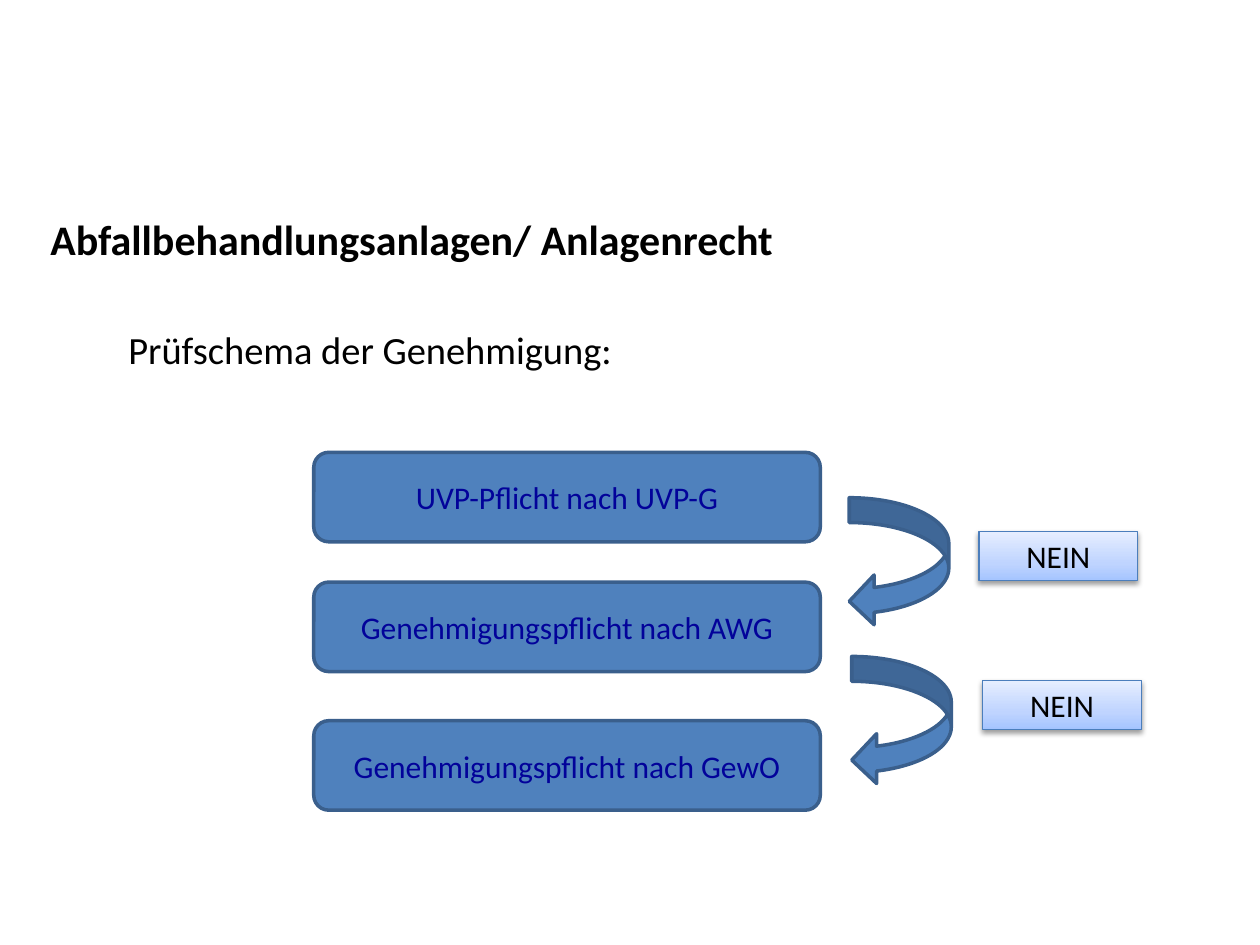
from lxml.etree import SubElement
from pptx import Presentation
from pptx.dml.color import RGBColor
from pptx.enum.shapes import MSO_SHAPE
from pptx.enum.text import MSO_ANCHOR, PP_ALIGN
from pptx.oxml import parse_xml
from pptx.oxml.ns import nsdecls, qn
from pptx.util import Inches, Pt

FONT = "Calibri"
COLORS = {
    "text": "000000", "step": "4F81BD", "step_line": "3A5F8C",
    "step_text": "02029A", "label_line": "4B7EBC", "shadow": "000000",
}
LABEL_STOPS = [(0, "A4C4FF"), (35, "BFD4FF"), (100, "E6EEFF")]
STEPS = ["UVP-Pflicht nach UVP-G", "Genehmigungspflicht nach AWG",
         "Genehmigungspflicht nach GewO"]
# Offsets from the top left corner of the flow, in inches
STEP_TOPS = [0, 1.03, 2.13]
ARROWS = [(4.25, 0.36), (4.27, 1.62)]
LABELS = [(5.28, 0.63), (5.31, 1.81)]


def rgb(name):
    return RGBColor.from_string(COLORS[name])


def write(tf, text, size, color="text", bold=False, align=PP_ALIGN.LEFT,
          anchor=MSO_ANCHOR.MIDDLE):
    tf.word_wrap = True
    tf.vertical_anchor = anchor
    p = tf.paragraphs[0]
    p.alignment = align
    r = p.add_run()
    r.text = text
    r.font.name, r.font.size, r.font.bold = FONT, Pt(size), bold
    r.font.color.rgb = rgb(color)
    return p


def add_block(slide, kind, box, line, width):
    sp = slide.shapes.add_shape(kind, *map(Inches, box))
    sp.shadow.inherit = False
    sp.fill.solid()
    sp.fill.fore_color.rgb = rgb("step")
    sp.line.color.rgb = rgb(line)
    sp.line.width = Pt(width)
    return sp


def style_label(sp):
    """Three-stop gradient and soft shadow below."""
    sp_pr = sp._element.spPr
    stops = "".join(f'<a:gs pos="{pos * 1000}"><a:srgbClr val="{c}"/></a:gs>'
                    for pos, c in LABEL_STOPS)
    grad = parse_xml(f'<a:gradFill {nsdecls("a")} rotWithShape="1">'
                     f'<a:gsLst>{stops}</a:gsLst>'
                     '<a:lin ang="16200000" scaled="0"/></a:gradFill>')
    sp_pr.replace(sp_pr.find(qn("a:solidFill")), grad)
    shadow = SubElement(sp_pr.find(qn("a:effectLst")), qn("a:outerShdw"),
                        blurRad=str(Pt(3.1)), dist=str(Pt(1.6)),
                        dir="5400000", rotWithShape="0")
    color = SubElement(shadow, qn("a:srgbClr"), val=COLORS["shadow"])
    SubElement(color, qn("a:alpha"), val="38000")


def add_title(slide, box, text):
    title = slide.shapes.title
    title.left, title.top, title.width, title.height = map(Inches, box)
    write(title.text_frame, text, 24, bold=True)


def add_intro(slide, box, text):
    tf = slide.shapes.add_textbox(*map(Inches, box)).text_frame
    p = write(tf, text, 22, anchor=MSO_ANCHOR.TOP)
    p.line_spacing = 0.8


def add_flow(slide, left, top):
    # Checking steps
    for text, dy in zip(STEPS, STEP_TOPS):
        sp = add_block(slide, MSO_SHAPE.ROUNDED_RECTANGLE,
                       (left, top + dy, 4.02, 0.71), "step_line", 2)
        write(sp.text_frame, text, 18, "step_text", align=PP_ALIGN.CENTER)
    # Arrows to the next step
    for dx, dy in ARROWS:
        add_block(slide, MSO_SHAPE.CURVED_LEFT_ARROW,
                  (left + dx, top + dy, 0.79, 1.02), "step_line", 2)
    # Answers beside the arrows
    for dx, dy in LABELS:
        sp = add_block(slide, MSO_SHAPE.RECTANGLE,
                       (left + dx, top + dy, 1.26, 0.39), "label_line", 0.75)
        style_label(sp)
        write(sp.text_frame, "NEIN", 18, align=PP_ALIGN.CENTER)


def main():
    prs = Presentation()
    prs.slide_width, prs.slide_height = Inches(10), Inches(7.5)
    slide = prs.slides.add_slide(prs.slide_layouts[5])
    add_title(slide, (0.3, 1.54, 9, 0.71),
              "Abfallbehandlungsanlagen/ Anlagenrecht")
    add_intro(slide, (0.92, 2.61, 8.38, 4.52), "Prüfschema der Genehmigung:")
    add_flow(slide, 2.49, 3.59)
    prs.save("out.pptx")


if __name__ == "__main__":
    main()
